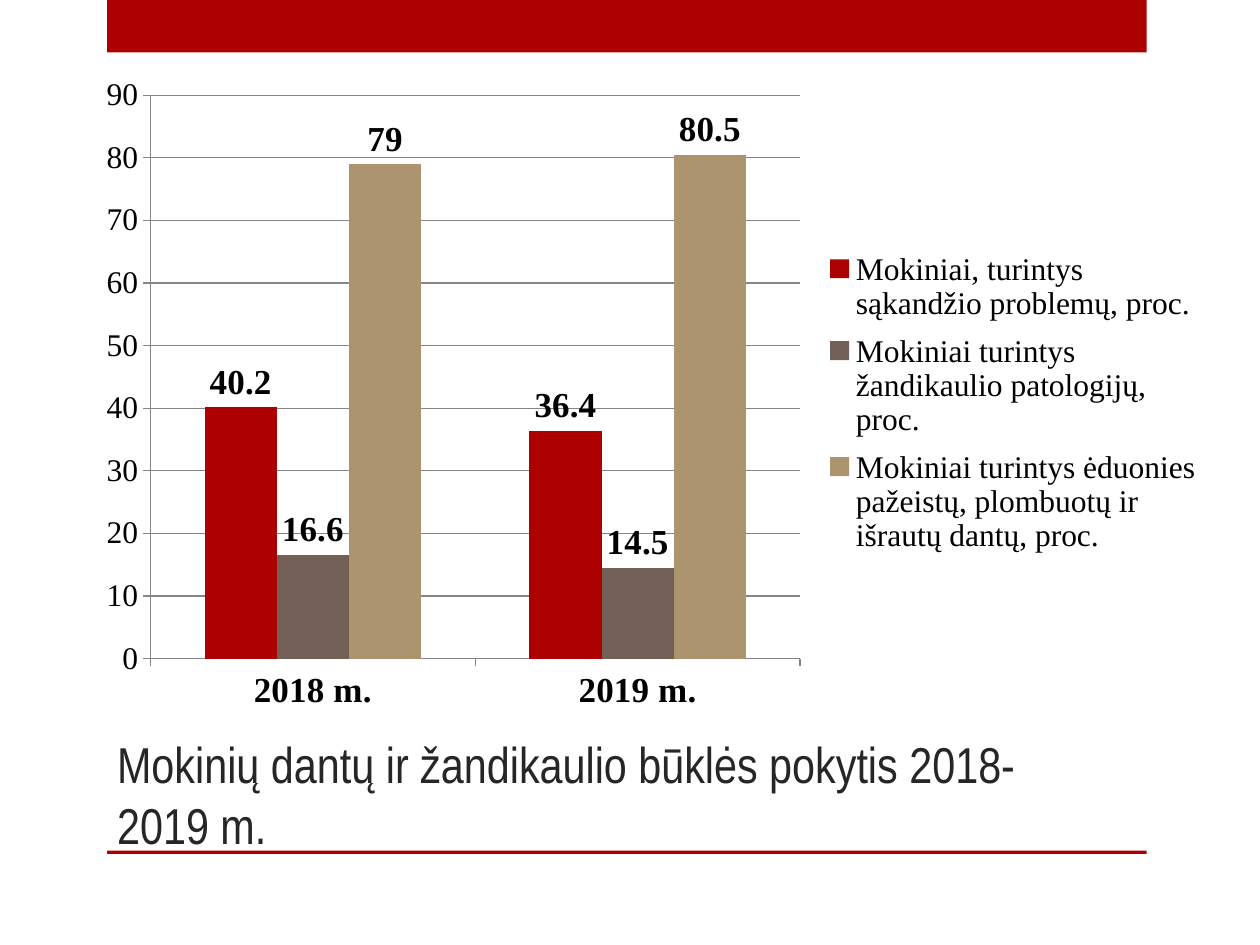
from lxml.etree import SubElement
from pptx import Presentation
from pptx.chart.data import CategoryChartData
from pptx.dml.color import RGBColor
from pptx.enum.chart import XL_CHART_TYPE, XL_LABEL_POSITION, XL_LEGEND_POSITION, XL_TICK_MARK
from pptx.enum.shapes import MSO_SHAPE
from pptx.enum.text import MSO_ANCHOR
from pptx.oxml.ns import qn
from pptx.util import Pt

RED = RGBColor(0xAD, 0x01, 0x01)
BROWN = RGBColor(0x72, 0x60, 0x56)
TAN = RGBColor(0xAC, 0x95, 0x6E)
GRAY = RGBColor(0x86, 0x86, 0x86)
DARK = RGBColor(0x26, 0x26, 0x26)
BLACK = RGBColor(0, 0, 0)


def set_format(target, values):
    for name, value in values.items():
        setattr(target, name, value)


def set_layout(element, index, values):
    for old in element.findall(qn("c:layout")):
        element.remove(old)
    layout = SubElement(element, qn("c:layout"))
    manual = SubElement(layout, qn("c:manualLayout"))
    for name, value in values.items():
        SubElement(manual, qn(f"c:{name}")).set("val", str(value))
    element.insert(index, layout)


deck = Presentation()
set_format(deck, {"slide_width": Pt(720), "slide_height": Pt(540)})
page = deck.slides.add_slide(deck.slide_layouts[6])

for top, height in ((0, 30), (486, 2)):
    band = page.shapes.add_shape(MSO_SHAPE.RECTANGLE, Pt(61.2), Pt(top), Pt(594), Pt(height))
    band.shadow.inherit = False
    band.fill.solid()
    band.fill.fore_color.rgb = RED
    band.line.fill.background()

box = page.shapes.add_textbox(Pt(59.8), Pt(417.6), Pt(534.2), Pt(74.2))
set_format(box.text_frame, {"word_wrap": True, "vertical_anchor": MSO_ANCHOR.BOTTOM})
para = box.text_frame.paragraphs[0]
span = para.add_run()
span.text = "Mokinių dantų ir žandikaulio būklės pokytis 2018-2019 m."
set_format(span.font, {"name": "Arial Narrow", "size": Pt(28.8)})
span.font.color.rgb = DARK

series_rows = [
    ("Mokiniai, turintys sąkandžio problemų, proc.", (40.2, 36.4), RED),
    ("Mokiniai turintys žandikaulio patologijų, proc.", (16.6, 14.5), BROWN),
    ("Mokiniai turintys ėduonies pažeistų, plombuotų ir išrautų dantų, proc.", (79, 80.5), TAN),
]
data = CategoryChartData()
data.categories = ["2018 m.", "2019 m."]
for name, values, color in series_rows:
    data.add_series(name, values)

chart = page.shapes.add_chart(
    XL_CHART_TYPE.COLUMN_CLUSTERED, Pt(54), Pt(43.2), Pt(640), Pt(374.4), data
).chart
set_format(chart, {"has_title": False, "has_legend": True})
set_format(chart.font, {"name": "Times New Roman", "size": Pt(18)})
chart.font.color.rgb = BLACK
set_format(chart.legend, {"position": XL_LEGEND_POSITION.RIGHT, "include_in_layout": False})

plot = chart.plots[0]
set_format(plot, {"gap_width": 150, "overlap": 0, "vary_by_categories": False})
bold_label = {"name": "Times New Roman", "size": Pt(20), "bold": True}
for series, (name, values, color) in zip(plot.series, series_rows):
    series.format.fill.solid()
    series.format.fill.fore_color.rgb = color
    labels = series.data_labels
    set_format(labels, {"show_value": True, "position": XL_LABEL_POSITION.OUTSIDE_END})
    set_format(labels.font, bold_label)
    labels.font.color.rgb = BLACK

set_format(chart.value_axis, {
    "minimum_scale": 0, "maximum_scale": 90, "major_unit": 10, "has_major_gridlines": True,
})
for axis in (chart.category_axis, chart.value_axis):
    axis.major_tick_mark = XL_TICK_MARK.OUTSIDE
    axis.format.line.color.rgb = GRAY
set_format(chart.category_axis.tick_labels.font, bold_label)
chart.category_axis.tick_labels.font.color.rgb = BLACK
chart.value_axis.major_gridlines.format.line.color.rgb = GRAY

edges = {"xMode": "edge", "yMode": "edge"}
plot_area = chart.element.find(".//" + qn("c:plotArea"))
legend = chart.element.find(".//" + qn("c:legend"))
set_layout(plot_area, 0, {"layoutTarget": "inner", **edges, "x": 0.05, "y": 0.03, "w": 0.58, "h": 0.86})
set_layout(legend, 1, {**edges, "x": 0.65, "y": 0.25, "w": 0.34, "h": 0.5})

deck.save("out.pptx")
